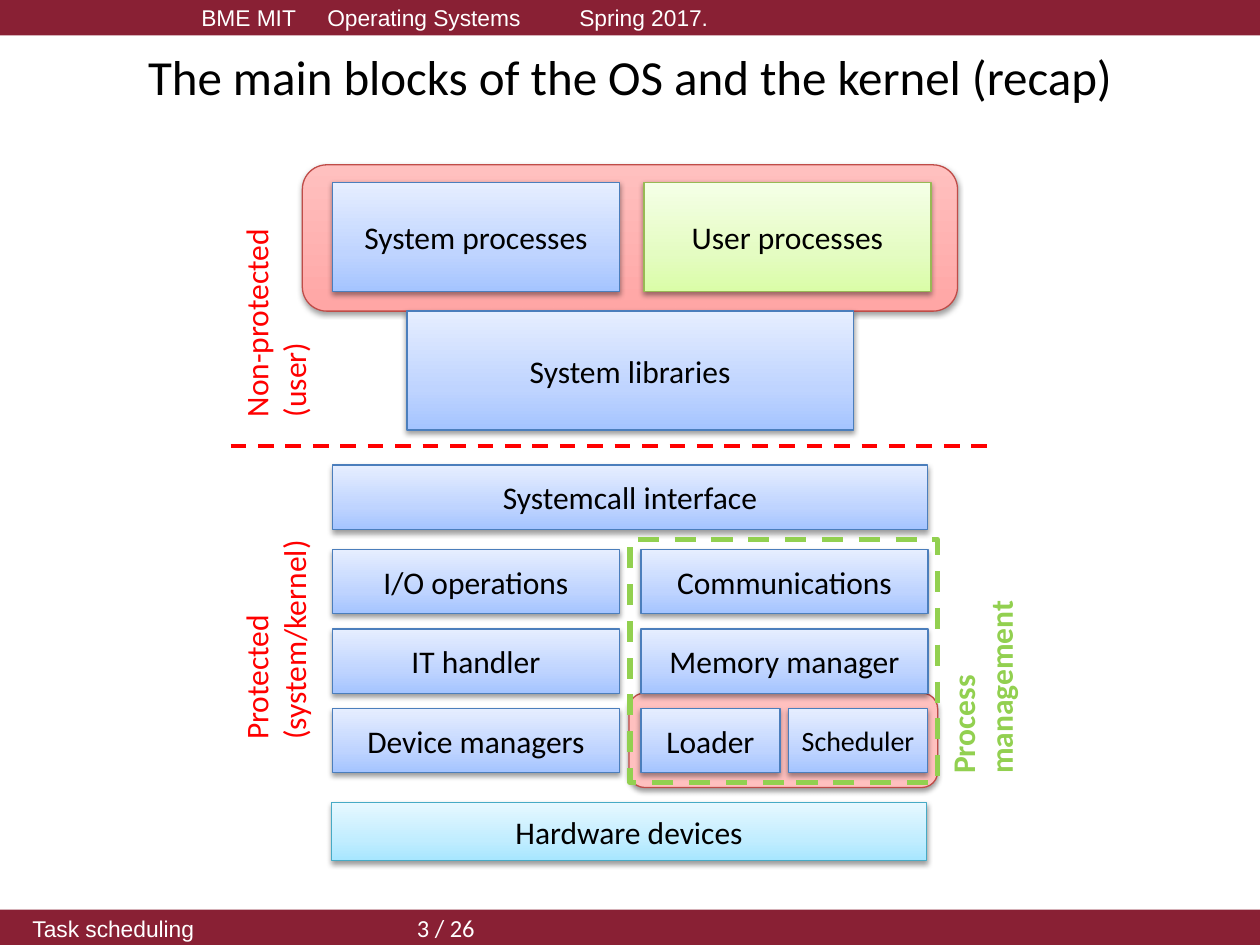
from lxml import etree
from pptx import Presentation
from pptx.dml.color import RGBColor
from pptx.enum import dml, shapes, text
from pptx.oxml import parse_xml
from pptx.oxml.ns import nsdecls, qn
from pptx.util import Pt

MAROON = RGBColor(0x89, 0x20, 0x34)
WHITE = RGBColor(0xFF, 0xFF, 0xFF)
BLACK = RGBColor(0, 0, 0)
RED = RGBColor(0xFF, 0, 0)
GREEN = RGBColor(0x92, 0xD0, 0x50)

# Block styles: gradient stops from bottom to top, then outline
BLUE_BLOCK = ([(0, "A4C4FF"), (35, "BFD4FF"), (100, "E6EEFF")], RGBColor(0x4B, 0x7E, 0xBC))
GREEN_BLOCK = ([(0, "DAFDA7"), (35, "E4FCC2"), (100, "F5FFE7")], RGBColor(0x98, 0xB9, 0x55))
CYAN_BLOCK = ([(0, "A7E6FF"), (35, "C1EDFF"), (100, "E7F8FF")], RGBColor(0x46, 0xAA, 0xC5))
PINK_GROUP = ([(0, "FFA6A5"), (100, "FFC0BF")], RGBColor(0xBF, 0x4C, 0x48))
PALE_GROUP = ([(0, "FFC0BF"), (100, "FFC0BF")], RGBColor(0xBF, 0x4C, 0x48))

TITLE = "The main blocks of the OS and the kernel (recap)"

# Bars: top, left indent, runs of (text, font, size)
BARS = [
    (0, 108, [("BME MIT\tOperating Systems\tSpring 2017.", "Arial", 13)]),
    (519.8, 11.5, [("Task scheduling \t\t ", "Arial", 13), ("3 / 26", "Calibri", 14)]),
]

# Columns and rows of the kernel grid
LEFT, RIGHT, COL_W, FULL_W = 190, 366.3, 164, 340
ROW_TOP, ROW_STEP, ROW_H = 314, 45.4, 36.8
HALF_W, HALF_STEP = 79.4, 84.3

GROUPS = [
    (359.4, 396, 176.4, 54, PALE_GROUP),
    (172.8, 94.2, 374.4, 83.6, PINK_GROUP),
]
BLOCKS = [
    ("Hardware devices", 189.5, 458.5, FULL_W, 33.2, CYAN_BLOCK),
    ("System libraries", 232.6, 177.8, 255, 68, BLUE_BLOCK),
    ("System processes", LEFT, 104.2, COL_W, 62.6, BLUE_BLOCK),
    ("User processes", 368, 104.2, COL_W, 62.6, GREEN_BLOCK),
    ("Systemcall interface", LEFT, 265.8, FULL_W, ROW_H, BLUE_BLOCK),
]
KERNEL_ROWS = [
    ["I/O operations", "Communications"],
    ["IT handler", "Memory manager"],
    ["Device managers", "Loader", "Scheduler"],
]
SMALL = {"Scheduler": 16}

# Sideways labels: lines, left, top, width, height, colour, bold, wrap
LABELS = [
    (["Non-protected", "(user)"], 131.8, 129.6, 58.2, 115.9, RED, False, False),
    (["Protected", "(system/kernel)"], 131.8, 292.3, 58.2, 137.5, RED, False, True),
    (["Process management"], 535.7, 331.9, 58.2, 117.4, GREEN, True, True),
]


def set_font(font, size, color, name="Calibri"):
    font.size, font.name = Pt(size), name
    font.color.rgb = color


def add_shape(kind, x, y, w, h):
    sp = s.shapes.add_shape(kind, Pt(x), Pt(y), Pt(w), Pt(h))
    sp.shadow.inherit = False
    return sp


def add_block(kind, x, y, w, h, style):
    """Shape with a vertical gradient, thin outline and soft shadow."""
    stops, outline = style
    sp = add_shape(kind, x, y, w, h)
    sp.line.color.rgb = outline
    sp.line.width = Pt(0.75)
    sp.fill.gradient()
    sp.fill.gradient_angle = 90
    gs_list = sp._element.spPr.find(qn("a:gradFill")).find(qn("a:gsLst"))
    for gs in list(gs_list):
        gs_list.remove(gs)
    for pos, color in stops:
        gs = etree.SubElement(gs_list, qn("a:gs"), pos=str(pos * 1000))
        etree.SubElement(gs, qn("a:srgbClr"), val=color)
    sp._element.spPr.find(qn("a:effectLst")).append(parse_xml(
        f'<a:outerShdw {nsdecls("a")} blurRad="{Pt(3.1)}" dist="{Pt(1.6)}" dir="5400000" '
        'rotWithShape="0"><a:srgbClr val="000000"><a:alpha val="38000"/></a:srgbClr></a:outerShdw>'))
    return sp


def add_text_block(label, x, y, w, h, style):
    tf = add_block(shapes.MSO_SHAPE.RECTANGLE, x, y, w, h, style).text_frame
    tf.margin_left = tf.margin_right = Pt(3)
    tf.vertical_anchor = text.MSO_ANCHOR.MIDDLE
    p = tf.paragraphs[0]
    p.text, p.alignment = label, text.PP_ALIGN.CENTER
    set_font(p.font, SMALL.get(label, 18), BLACK)


prs = Presentation()
prs.slide_width, prs.slide_height = Pt(720), Pt(540)
s = prs.slides.add_slide(prs.slide_layouts[6])

# Header and footer bars
for top, indent, runs in BARS:
    sp = add_shape(shapes.MSO_SHAPE.RECTANGLE, 0, top, 720, 20.2)
    sp.fill.solid()
    sp.fill.fore_color.rgb = MAROON
    sp.line.fill.background()
    sp.text_frame.vertical_anchor = text.MSO_ANCHOR.MIDDLE
    p = sp.text_frame.paragraphs[0]
    p.alignment = text.PP_ALIGN.LEFT
    pPr = p._p.get_or_add_pPr()
    pPr.set("marL", str(Pt(indent)))
    pPr.set("indent", "0")
    pPr.set("defTabSz", str(Pt(72)))
    for words, name, size in runs:
        r = p.add_run()
        r.text = words
        set_font(r.font, size, WHITE, name)

# Group backgrounds
for x, y, w, h, style in GROUPS:
    add_block(shapes.MSO_SHAPE.ROUNDED_RECTANGLE, x, y, w, h, style)

# Title
tf = s.shapes.add_textbox(Pt(36), Pt(21.6), Pt(648), Pt(44)).text_frame
tf.word_wrap = True
tf.vertical_anchor = text.MSO_ANCHOR.MIDDLE
p = tf.paragraphs[0]
p.text, p.alignment = TITLE, text.PP_ALIGN.CENTER
set_font(p.font, 28, BLACK)

# Blocks, then the kernel grid
for block in BLOCKS:
    add_text_block(*block)
for i, (left_label, *right_labels) in enumerate(KERNEL_ROWS):
    y = ROW_TOP + i * ROW_STEP
    add_text_block(left_label, LEFT, y, COL_W, ROW_H, BLUE_BLOCK)
    w = COL_W if len(right_labels) == 1 else HALF_W
    for j, label in enumerate(right_labels):
        add_text_block(label, RIGHT + j * HALF_STEP, y, w, ROW_H, BLUE_BLOCK)

# Border between user and kernel mode
border = s.shapes.add_connector(shapes.MSO_CONNECTOR.STRAIGHT, Pt(131.8), Pt(255), Pt(564.5), Pt(255))
border.line.color.rgb = RED
border.line.width = Pt(2.25)
border.line.dash_style = dml.MSO_LINE.DASH
etree.SubElement(border._element.spPr, qn("a:effectLst"))

# Process management frame
frame = add_shape(shapes.MSO_SHAPE.RECTANGLE, 360, 308.2, 175.7, 139)
frame.fill.background()
frame.line.color.rgb = GREEN
frame.line.width = Pt(3)
frame.line.dash_style = dml.MSO_LINE.DASH

# Sideways labels
for lines, x, y, w, h, color, bold, wrap in LABELS:
    tf = s.shapes.add_textbox(Pt(x), Pt(y), Pt(w), Pt(h)).text_frame
    tf.word_wrap = wrap
    tf._txBody.bodyPr.set("vert", "vert270")
    tf.text = "\n".join(lines)
    for p in tf.paragraphs:
        set_font(p.font, 18, color)
        p.font.bold = bold

prs.save("out.pptx")
